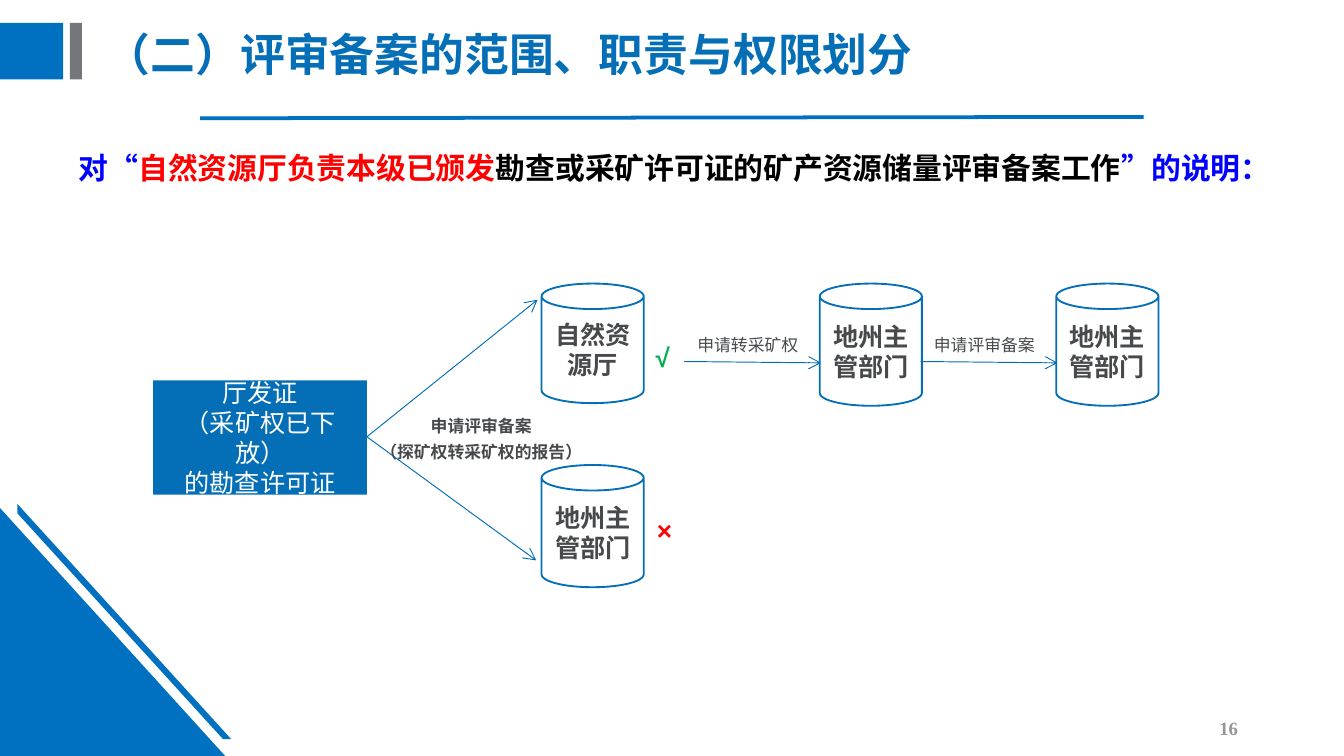
from lxml.etree import SubElement
from pptx import Presentation
from pptx.dml.color import RGBColor
from pptx.enum.shapes import MSO_CONNECTOR, MSO_SHAPE
from pptx.enum.text import MSO_ANCHOR, MSO_AUTO_SIZE, PP_ALIGN
from pptx.oxml.ns import qn
from pptx.util import Pt

SCALE = 9144
WIDTH = 1000
HEIGHT = WIDTH * 9 / 16
BLUE, BRIGHT_BLUE, DARK = "046FB6", "0070C0", "47494B"
CJK = "Noto Sans CJK SC"
LEFT, CENTER, RIGHT = PP_ALIGN.LEFT, PP_ALIGN.CENTER, PP_ALIGN.RIGHT


def px(*lengths):
    """Turn px lengths into EMU."""
    return [round(length * SCALE) for length in lengths]


def rgb(hex_code):
    """Turn a hex string into a colour."""
    return RGBColor.from_string(hex_code)


def write(shape, text, size=9, font="Arial", color=DARK, bold=False, align=LEFT,
          spacing=None, gap=None, anchor=MSO_ANCHOR.TOP, wrap=True, inset=(10, 5)):
    """Write lines of text; a line is a string or a list of (text, colour) parts."""
    frame = shape.text_frame
    frame.word_wrap = wrap
    frame.auto_size = MSO_AUTO_SIZE.NONE if wrap else MSO_AUTO_SIZE.SHAPE_TO_FIT_TEXT
    frame.vertical_anchor = anchor
    frame.margin_left = frame.margin_right = px(inset[0])[0]
    frame.margin_top = frame.margin_bottom = px(inset[1])[0]
    for index, line in enumerate([text] if isinstance(text, str) else text):
        paragraph = frame.add_paragraph() if index else frame.paragraphs[0]
        paragraph.alignment = align
        if spacing:
            paragraph.line_spacing = spacing
        if gap:
            paragraph.space_before = paragraph.space_after = Pt(gap)
        for words, shade in [(line, color)] if isinstance(line, str) else line:
            run = paragraph.add_run()
            run.text = words
            run.font.size, run.font.bold, run.font.name = Pt(size), bold, font
            run.font.color.rgb = rgb(shade)
            SubElement(run.font._element, qn("a:ea"), typeface=CJK)


def add_text(slide, box, text, **style):
    """Add a text box."""
    write(slide.shapes.add_textbox(*px(*box)), text, **style)


def paint(shape, fill, outline=None):
    """Give a shape a flat fill and an optional outline."""
    shape.shadow.inherit = False
    shape.fill.solid()
    shape.fill.fore_color.rgb = rgb(fill)
    if outline:
        shape.line.color.rgb = rgb(outline)
        shape.line.width = Pt(1)
    else:
        shape.line.fill.background()


def add_block(slide, kind, box, fill, outline=None):
    """Add a painted preset shape."""
    block = slide.shapes.add_shape(kind, *px(*box))
    paint(block, fill, outline)
    return block


def add_line(slide, start, end, color=BLUE, width=0.5, arrow=True):
    """Add a straight line, with an arrowhead at its end if asked."""
    line = slide.shapes.add_connector(MSO_CONNECTOR.STRAIGHT, *px(*start, *end))
    line.line.color.rgb = rgb(color)
    line.line.width = Pt(width)
    if arrow:
        SubElement(line.line._get_or_add_ln(), qn("a:tailEnd"), type="arrow")
    SubElement(line._element.spPr, qn("a:effectLst"))


def add_header(slide, x, y, width):
    """Place the marker bars, the title and the rule under it."""
    add_block(slide, MSO_SHAPE.RECTANGLE, (x, y + 17, 47, 42), BRIGHT_BLUE)
    add_block(slide, MSO_SHAPE.RECTANGLE, (x + 52, y + 17, 9, 42), "73767A")
    add_line(slide, (x + 149, y + 88), (x + width - 149, y + 87), BRIGHT_BLUE, 2, False)
    add_text(slide, (x + 69, y + 10, 851, 65), "（二）评审备案的范围、职责与权限划分",
             size=24, font=CJK, color=BLUE, bold=True, spacing=0.9,
             anchor=MSO_ANCHOR.MIDDLE)


def add_corner(slide, x, y):
    """Place the triangle and the slanted stripe of the lower left corner."""
    add_block(slide, MSO_SHAPE.RIGHT_TRIANGLE, (x, y + 3, 168, 185), BRIGHT_BLUE)
    outline = slide.shapes.build_freeform(x + 13, y, scale=SCALE)
    outline.add_line_segments([(x + 172, y + 175), (x + 166, y + 175), (x + 13, y + 7)])
    paint(outline.convert_to_shape(), BRIGHT_BLUE)


def add_statement(slide, box):
    """Place the sentence that the diagram explains."""
    parts = [("对“", "0000FF"), ("自然资源厅负责本级已颁发", "FF0000"),
             ("勘查或采矿许可证的矿产资源储量评审备案工作", "000000"),
             ("”的说明：", "0000FF")]
    add_text(slide, box, [parts], size=16, font=CJK, bold=True, align=CENTER,
             spacing=1.5, gap=3)


def add_department(slide, x, y, name, height=91):
    """Place one department as a can."""
    can = add_block(slide, MSO_SHAPE.CAN, (x, y, 76, height), "FFFFFF", BLUE)
    write(can, name, size=13.5, font="Calibri", bold=True, align=CENTER,
          anchor=MSO_ANCHOR.MIDDLE, inset=(7, 4))


def add_step(slide, x, y, label):
    """Place a labelled arrow that leads to the next department."""
    add_line(slide, (x, y + 29), (x + 102, y + 30))
    add_text(slide, (x, y, 95, 30), label, spacing=1.3, wrap=False)


def add_flow(slide, x, y):
    """Place the licence, its two branches and the steps that follow."""
    licence = add_block(slide, MSO_SHAPE.RECTANGLE, (x, y + 72, 159, 85), BLUE)
    write(licence, ["厅发证", "（采矿权已下放）", "的勘查许可证"], size=13.5,
          font="Calibri", color="FFFFFF", align=CENTER, anchor=MSO_ANCHOR.MIDDLE,
          inset=(7, 4))
    local = "地州主管部门"
    add_department(slide, x + 289, y, "自然资源厅", 89)
    add_department(slide, x + 289, y + 135, local)
    for mark, color, left, top in (("√", "00B050", 364, 31), ("×", "FF0000", 365, 160)):
        add_text(slide, (x + left, y + top, 33, 41), mark, size=14, color=color,
                 bold=True, spacing=1.3, wrap=False)
    for index, label in enumerate(("申请转采矿权", "申请评审备案")):
        left = x + 395 + index * 176
        add_step(slide, left, y + 29, label)
        add_department(slide, left + 101, y, local)
    fork = (x + 159, y + 114)
    add_line(slide, fork, (x + 286, y + 12))
    add_line(slide, fork, (x + 285, y + 206))
    add_text(slide, (x + 159, y + 89, 170, 49), ["申请评审备案", "（探矿权转采矿权的报告）"],
             bold=True, align=CENTER, spacing=1.3, wrap=False)


def main():
    """Build and save the slide."""
    deck = Presentation()
    deck.slide_width, deck.slide_height = px(WIDTH, HEIGHT)
    slide = deck.slides.add_slide(deck.slide_layouts[6])
    add_corner(slide, 0, 375)
    add_header(slide, 0, 0, WIDTH)
    add_statement(slide, (26, 93, 952, 99))
    add_flow(slide, 114, 211)
    add_text(slide, (706, 527, 225, 30), "16", size=10, font="Times New Roman",
             color="959596", bold=True, align=RIGHT, anchor=MSO_ANCHOR.MIDDLE)
    deck.save("out.pptx")


if __name__ == "__main__":
    main()
